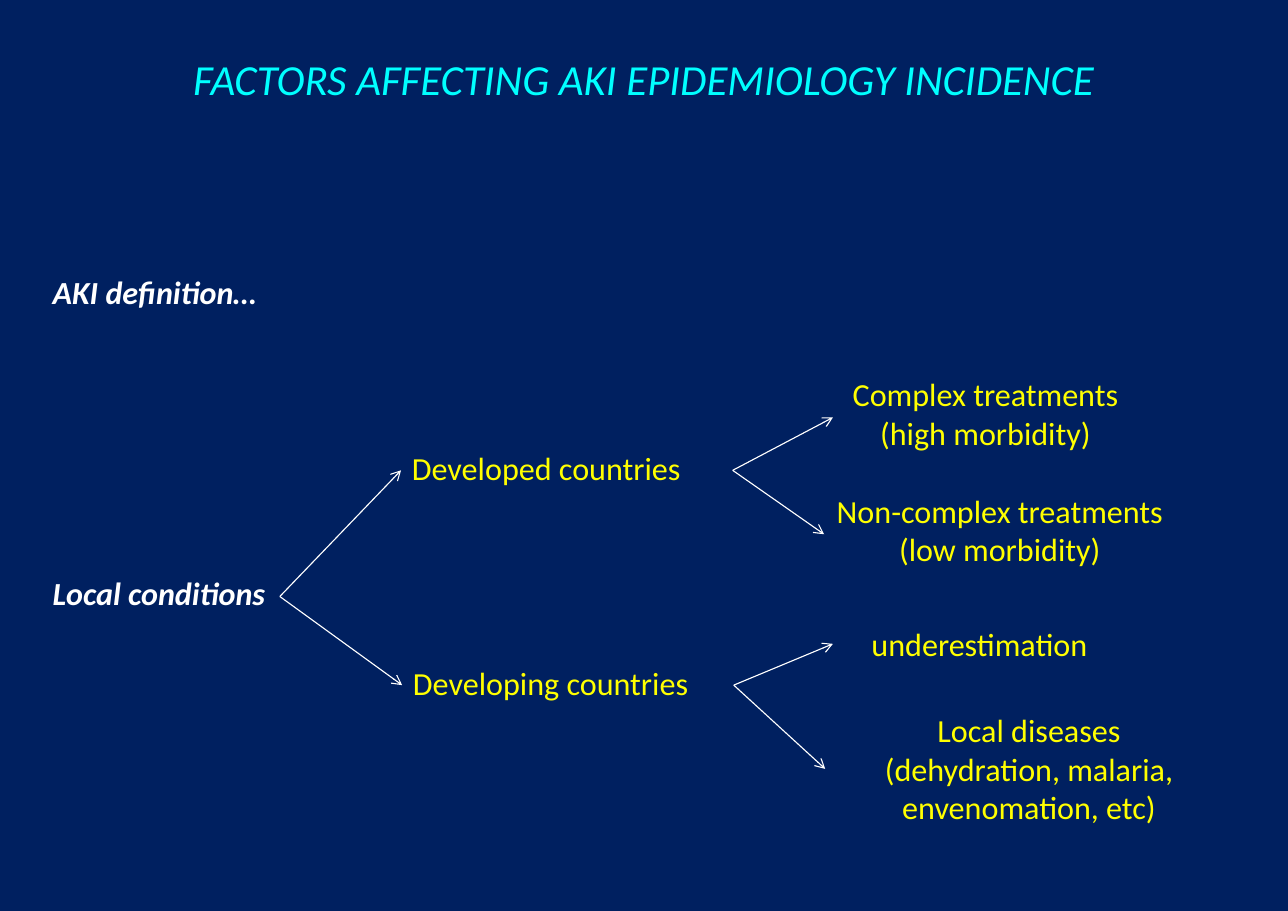
"""Build the slide on factors affecting AKI incidence."""
from dataclasses import dataclass

from lxml import etree
from pptx import Presentation
from pptx.dml.color import RGBColor
from pptx.enum.shapes import MSO_CONNECTOR
from pptx.enum.text import MSO_ANCHOR, MSO_AUTO_SIZE, PP_ALIGN
from pptx.oxml.ns import qn
from pptx.util import Inches, Pt

LEFT, CENTER = PP_ALIGN.LEFT, PP_ALIGN.CENTER
MIDDLE = MSO_ANCHOR.MIDDLE
NO_AUTOSIZE = MSO_AUTO_SIZE.NONE
STRAIGHT = MSO_CONNECTOR.STRAIGHT
LEFT_SIDE, RIGHT_SIDE = 1, 3


@dataclass(frozen=True)
class Theme:
    """Colours, font and sizes of the slide."""
    background: RGBColor = RGBColor(0x00, 0x20, 0x60)
    title: RGBColor = RGBColor(0x00, 0xFF, 0xFF)
    heading: RGBColor = RGBColor(0xFF, 0xFF, 0xFF)
    branch: RGBColor = RGBColor(0xFF, 0xFF, 0x00)
    font: str = "Calibri"
    title_size: int = 28
    text_size: int = 21
    line_width: float = 0.75


THEME = Theme()


def format_text(text_frame, size, color, alignment, bold=False, italic=False):
    """Format every run of a text frame."""
    for paragraph in text_frame.paragraphs:
        paragraph.alignment = alignment
        for run in paragraph.runs:
            font = run.font
            font.name, font.size = THEME.font, Pt(size)
            font.bold, font.italic = bold, italic
            font.color.rgb = color


def add_title(slide, text):
    """Place and format the title placeholder."""
    title = slide.shapes.title
    title.left, title.top = Inches(1.32), Inches(0.19)
    title.width, title.height = Inches(9.04), Inches(1.05)
    text_frame = title.text_frame
    text_frame.text = text
    text_frame.word_wrap = True
    text_frame.auto_size = NO_AUTOSIZE
    text_frame.vertical_anchor = MIDDLE
    format_text(text_frame, THEME.title_size, THEME.title, CENTER, italic=True)


def add_label(slide, text, bounds, color, alignment, emphasis=False):
    """Add a text box and return it."""
    shape = slide.shapes.add_textbox(*map(Inches, bounds))
    text_frame = shape.text_frame
    text_frame.text = text
    text_frame.word_wrap = True
    text_frame.auto_size = NO_AUTOSIZE
    format_text(text_frame, THEME.text_size, color, alignment, emphasis, emphasis)
    return shape


def add_heading(slide, text, bounds):
    """Add a bold italic heading."""
    return add_label(slide, text, bounds, THEME.heading, LEFT, True)


def add_arrow(slide, source, target):
    """Join the right side of one label to the left side of another."""
    arrow = slide.shapes.add_connector(STRAIGHT, 0, 0, 0, 0)
    arrow.begin_connect(source, RIGHT_SIDE)
    arrow.end_connect(target, LEFT_SIDE)
    arrow.line.color.rgb = THEME.heading
    arrow.line.width = Pt(THEME.line_width)
    properties = arrow._element.spPr
    etree.SubElement(properties.find(qn("a:ln")), qn("a:tailEnd"), type="arrow")
    etree.SubElement(properties, qn("a:effectLst"))


def add_branch(slide, parent, text, bounds, alignment=CENTER):
    """Add a label with an arrow from its parent."""
    label = add_label(slide, text, bounds, THEME.branch, alignment)
    add_arrow(slide, parent, label)
    return label


def main():
    """Build and save the slide."""
    presentation = Presentation()
    presentation.slide_width = Inches(11.69)
    presentation.slide_height = Inches(8.27)
    slide = presentation.slides.add_slide(presentation.slide_layouts[5])
    fill = slide.background.fill
    fill.solid()
    fill.fore_color.rgb = THEME.background

    add_title(slide, "FACTORS AFFECTING AKI EPIDEMIOLOGY INCIDENCE")
    add_heading(slide, "AKI definition…", (0.38, 2.42, 2.11, 0.45))
    conditions = add_heading(slide, "Local conditions", (0.38, 5.16, 2.16, 0.51))

    developed = add_branch(
        slide, conditions, "Developed countries", (3.64, 4.02, 3.01, 0.5), LEFT)
    add_branch(slide, developed, "Complex treatments\n(high morbidity)",
               (7.56, 3.35, 2.77, 0.88))
    add_branch(slide, developed, "Non-complex treatments\n(low morbidity)",
               (7.48, 4.41, 3.19, 0.88))

    developing = add_branch(
        slide, conditions, "Developing countries", (3.65, 5.97, 3.01, 0.5), LEFT)
    add_branch(slide, developing, "underestimation", (7.56, 5.62, 2.66, 0.45))
    add_branch(slide, developing,
               "Local diseases\n(dehydration, malaria, envenomation, etc)",
               (7.49, 6.4, 3.7, 1.16))

    presentation.save("out.pptx")


if __name__ == "__main__":
    main()
